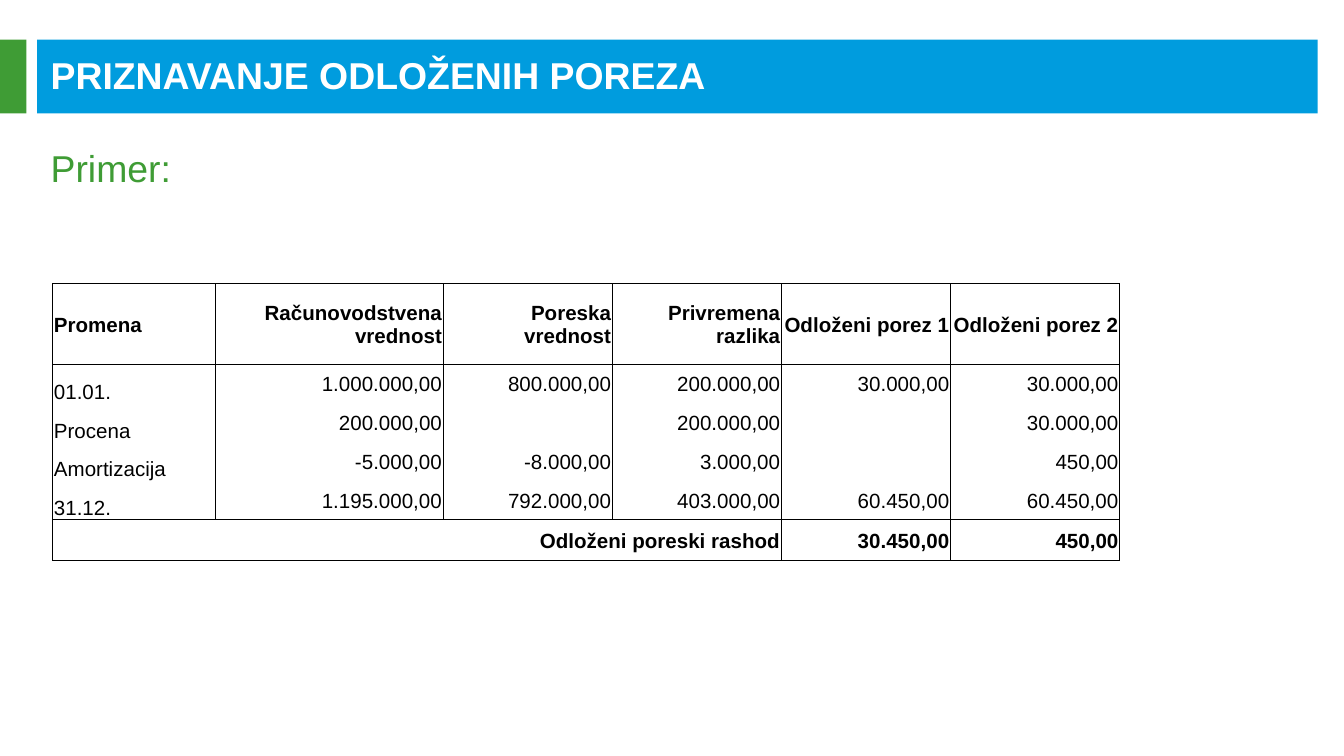
from dataclasses import dataclass

from lxml.etree import SubElement
from pptx import Presentation
from pptx.dml.color import RGBColor as Rgb
from pptx.enum.shapes import MSO_SHAPE as Shape
from pptx.enum.text import MSO_ANCHOR as Anchor, MSO_AUTO_SIZE as AutoSize, PP_ALIGN as Align
from pptx.oxml.ns import qn
from pptx.util import Pt


@dataclass(frozen=True)
class Theme:
    font: str = "Arial"
    blue: str = "009CDE"
    green: str = "3F9C35"
    white: str = "FFFFFF"
    black: str = "000000"
    heading_size: float = 20
    table_size: float = 11
    border: float = 0.5
    cell_inset: float = 0.7


class SlideBuilder:
    def __init__(self, slide, theme):
        self.slide = slide
        self.theme = theme

    def bar(self, left, top, width, height, color):
        bar = self.slide.shapes.add_shape(
            Shape.RECTANGLE, Pt(left), Pt(top), Pt(width), Pt(height))
        bar.shadow.inherit = False
        bar.fill.solid()
        bar.fill.fore_color.rgb = Rgb.from_string(color)
        bar.line.fill.background()
        bar.element.getparent().insert(2, bar.element)

    def run(self, paragraph, text, size, color, bold=False):
        run = paragraph.add_run()
        run.text = text
        run.font.name = self.theme.font
        run.font.size = Pt(size)
        run.font.bold = bold
        run.font.color.rgb = Rgb.from_string(color)

    def placeholder(self, index, box, text, color, anchor, bold=False, inset_top=3.6):
        holder = self.slide.placeholders[index]
        holder.left, holder.top, holder.width, holder.height = map(Pt, box)
        frame = holder.text_frame
        frame.auto_size = AutoSize.NONE
        frame.word_wrap = True
        frame.vertical_anchor = anchor
        frame.margin_top = Pt(inset_top)
        paragraph = frame.paragraphs[0]
        properties = paragraph._p.get_or_add_pPr()
        properties.set("marL", "0")
        properties.set("indent", "0")
        SubElement(properties, qn("a:buNone"))
        paragraph.alignment = Align.LEFT
        paragraph.space_before = Pt(0)
        self.run(paragraph, text, self.theme.heading_size, color, bold)

    def borders(self, cell, sides):
        properties = cell._tc.get_or_add_tcPr()
        for side in "LRTB":
            line = SubElement(properties, qn(f"a:ln{side}"), w=str(Pt(self.theme.border)))
            if side in sides:
                fill = SubElement(line, qn("a:solidFill"))
                SubElement(fill, qn("a:srgbClr"), val=self.theme.black)
            else:
                SubElement(line, qn("a:noFill"))

    def cell(self, cell, text, sides, align, anchor, bold):
        theme = self.theme
        self.borders(cell, sides)
        cell.fill.background()
        cell.margin_left = cell.margin_right = cell.margin_top = Pt(theme.cell_inset)
        cell.margin_bottom = 0
        cell.vertical_anchor = anchor
        paragraph = cell.text_frame.paragraphs[0]
        paragraph.alignment = align
        if text:
            self.run(paragraph, text, theme.table_size, theme.black, bold)
        SubElement(paragraph._p, qn("a:endParaRPr"), sz=str(int(theme.table_size * 100)))

    def table(self, left, top, widths, heights, rows):
        table = self.slide.shapes.add_table(
            len(rows), len(widths), Pt(left), Pt(top),
            Pt(sum(widths)), Pt(sum(heights))).table
        table.first_row = table.horz_banding = False
        for column, width in zip(table.columns, widths):
            column.width = Pt(width)
        for row, height in zip(table.rows, heights):
            row.height = Pt(height)
        last = len(rows) - 1
        for r, values in enumerate(rows):
            strong = r in (0, last)
            sides = "LR" + ("T" if strong or r == 1 else "") + ("B" if strong or r == last - 1 else "")
            for c, value in enumerate(values):
                label = c == 0 and r < last
                self.cell(table.cell(r, c), value, sides,
                          Align.LEFT if label else Align.RIGHT,
                          Anchor.BOTTOM if label and not strong else Anchor.MIDDLE,
                          strong)
        table.cell(last, 0).merge(table.cell(last, 3))


CHANGES = [
    ["Promena", "Računovodstvena vrednost", "Poreska vrednost", "Privremena razlika",
     "Odloženi porez 1", "Odloženi porez 2"],
    ["01.01.", "1.000.000,00", "800.000,00", "200.000,00", "30.000,00", "30.000,00"],
    ["Procena", "200.000,00", "", "200.000,00", "", "30.000,00"],
    ["Amortizacija", "-5.000,00", "-8.000,00", "3.000,00", "", "450,00"],
    ["31.12.", "1.195.000,00", "792.000,00", "403.000,00", "60.450,00", "60.450,00"],
    ["Odloženi poreski rashod", "", "", "", "30.450,00", "450,00"],
]


def main():
    deck = Presentation()
    deck.slide_width, deck.slide_height = Pt(720), Pt(405)
    theme = Theme()
    page = SlideBuilder(deck.slides.add_slide(deck.slide_layouts[1]), theme)
    page.bar(0, 21.2, 14.2, 39.6, theme.green)
    page.bar(19.9, 21.2, 686, 39.6, theme.blue)
    page.placeholder(0, (19.9, 28.1, 680.4, 23.6), "PRIZNAVANJE ODLOŽENIH POREZA",
                     theme.white, Anchor.MIDDLE, bold=True)
    page.placeholder(1, (19.9, 72, 686, 54.7), "Primer:",
                     theme.green, Anchor.TOP, inset_top=6)
    page.table(28.2, 152, [87, 122.3] + [90.6] * 4, [43.4] + [20.8] * 4 + [22], CHANGES)
    deck.save("out.pptx")


if __name__ == "__main__":
    main()
